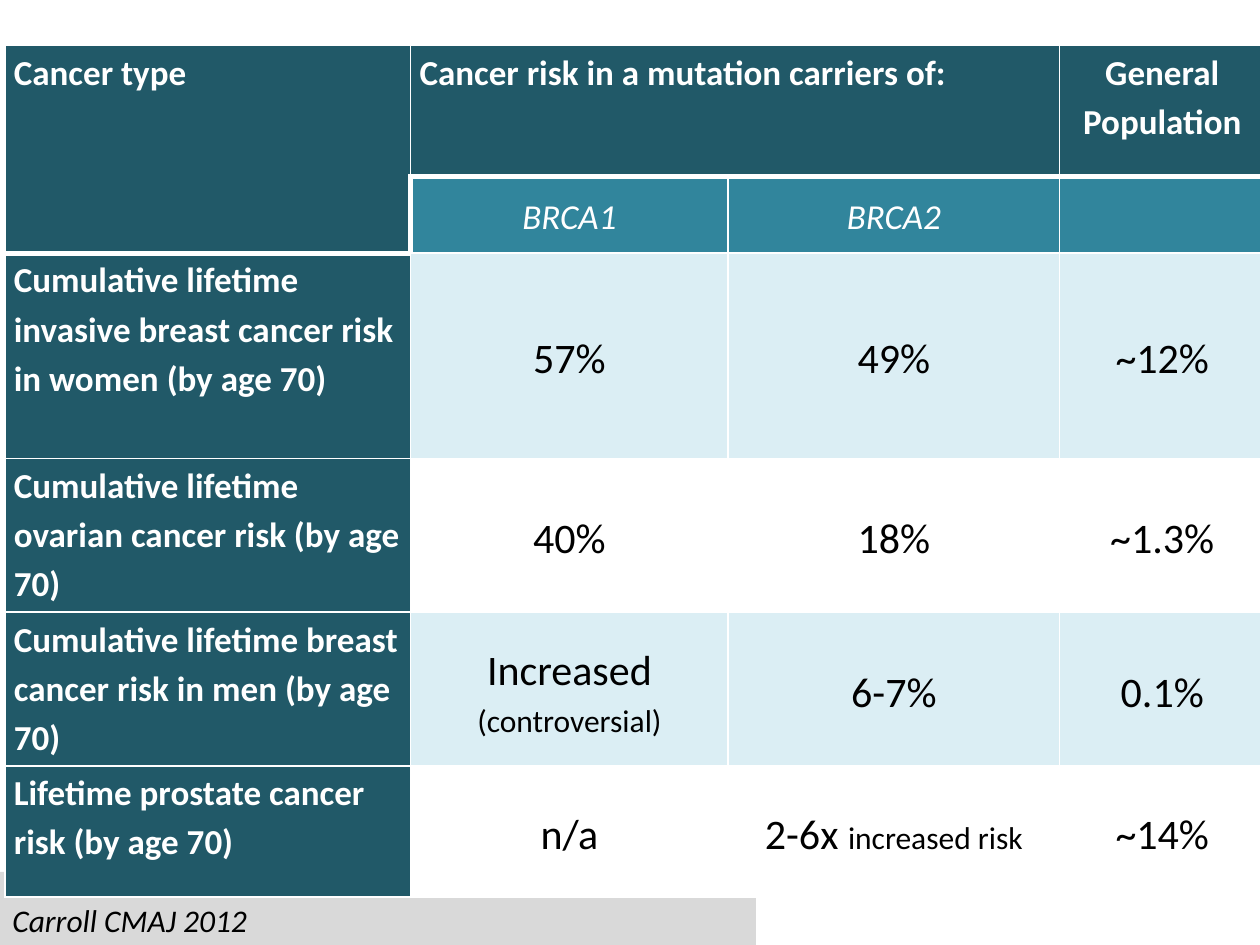
import pptx
import pptx.util
import pptx.dml.color
import pptx.enum.shapes
import pptx.enum.text
import pptx.oxml
import pptx.oxml.ns
from dataclasses import dataclass

PX = 9144  # 100 px to the inch


@dataclass(frozen=True)
class Theme:
    font: str = "Calibri"
    white: str = "FFFFFF"
    black: str = "000000"
    grey: str = "D9D9D9"
    header: str = "215968"
    subheader: str = "31859C"
    band: str = "DBEEF4"
    label: int = 20
    value: int = 24
    small: int = 18


theme = Theme()
rgb = pptx.dml.color.RGBColor.from_string
MIDDLE = pptx.enum.text.MSO_ANCHOR.MIDDLE
CENTER = pptx.enum.text.PP_ALIGN.CENTER


def add_border(cell, side, points):
    """Draw one white cell edge; side is L, R, T or B, in that order."""
    cell._tc.get_or_add_tcPr().append(pptx.oxml.parse_xml(
        f'<a:ln{side} {pptx.oxml.ns.nsdecls("a")} w="{points * 12700}">'
        f'<a:solidFill><a:srgbClr val="{theme.white}"/></a:solidFill></a:ln{side}>'))


def add_rect(s, left, top, width, height, color):
    rect = s.shapes.add_shape(pptx.enum.shapes.MSO_SHAPE.RECTANGLE,
                              left * PX, top * PX, width * PX, height * PX)
    rect.shadow.inherit = False
    rect.fill.solid()
    rect.fill.fore_color.rgb = rgb(color)
    rect.line.fill.background()
    return rect


prs = pptx.Presentation()
prs.slide_width, prs.slide_height = 1000 * PX, 750 * PX
s = prs.slides.add_slide(prs.slide_layouts[6])

# Footer band and citation
add_rect(s, 0, 692, 600, 58, theme.grey)
sp = s.shapes.add_textbox(0, 710 * PX, 250 * PX, 40 * PX)
tf = sp.text_frame
tf.word_wrap = True
tf.text = "Carroll CMAJ 2012"
r = tf.paragraphs[0].runs[0]
r.font.name, r.font.size, r.font.italic = theme.font, pptx.util.Pt(theme.small), True
r.font.color.rgb = rgb(theme.black)

# Risk table: a cell is text, or a list of paragraphs made of (text, size) runs
col_widths = [322, 252, 263, 163]
row_heights = [104, 61, 163, 122, 122, 104]
rows = [
    ["Cancer type", "Cancer risk in a mutation carriers of:", "", "General Population"],
    ["", "BRCA1", "BRCA2", ""],
    ["Cumulative lifetime invasive breast cancer risk in women (by age 70)",
     "57%", "49%", "~12%"],
    ["Cumulative lifetime ovarian cancer risk (by age 70)", "40%", "18%", "~1.3%"],
    ["Cumulative lifetime breast cancer risk in men (by age 70)",
     [[("Increased", theme.value)], [("(controversial)", theme.small)]], "6-7%", "0.1%"],
    ["Lifetime prostate cancer risk (by age 70)", "n/a",
     [[("2-6x ", theme.value), ("increased risk", theme.small)]], "~14%"],
]
# Edges of the thick rule that steps down around the header
thick = {(1, 0, "B"), (2, 0, "T"), (0, 0, "B"), (1, 1, "L")}
thick |= {(row, c, side) for c in (1, 2, 3) for row, side in ((0, "B"), (1, "T"))}

table = s.shapes.add_table(len(rows), len(col_widths), 4 * PX, 36 * PX,
                           sum(col_widths) * PX, sum(row_heights) * PX).table
table.first_row = table.horz_banding = False
for column, width in zip(table.columns, col_widths):
    column.width = width * PX
for row, height in zip(table.rows, row_heights):
    row.height = height * PX
table.cell(0, 0).merge(table.cell(1, 0))
table.cell(0, 1).merge(table.cell(0, 2))

for i, row in enumerate(rows):
    for j, content in enumerate(row):
        cell = table.cell(i, j)
        is_label = i == 0 or j == 0
        is_value = i > 1 and j > 0
        if is_label:
            fill = theme.header
        elif i == 1:
            fill = theme.subheader
        else:
            fill = theme.white if i % 2 else theme.band

        for side in "LRTB":
            add_border(cell, side, 3 if (i, j, side) in thick else 1)
        cell.fill.solid()
        cell.fill.fore_color.rgb = rgb(fill)
        cell.margin_left = cell.margin_right = 7 * PX
        cell.margin_top = cell.margin_bottom = 0
        if not is_label:
            cell.vertical_anchor = MIDDLE
        if not content:
            continue

        if isinstance(content, str):
            content = [[(content, theme.value if is_value else theme.label)]]
        tf = cell.text_frame
        for k, runs in enumerate(content):
            p = tf.add_paragraph() if k else tf.paragraphs[0]
            p.line_spacing = 1.15
            p.space_after = pptx.util.Pt(10 if len(content) == 1 else 0)
            if not is_label or j == 3:
                p.alignment = CENTER
            for text, size in runs:
                r = p.add_run()
                r.text = text
                r.font.name, r.font.size = theme.font, pptx.util.Pt(size)
                r.font.bold = is_label
                r.font.italic = i == 1
                r.font.color.rgb = rgb(theme.black if is_value else theme.white)

# White corner block over the table's lower right edge
corner = add_rect(s, 886, 682, 114, 68, theme.white)
corner.line.color.rgb = rgb(theme.white)
corner.line.width = pptx.util.Pt(2)

prs.save("out.pptx")
